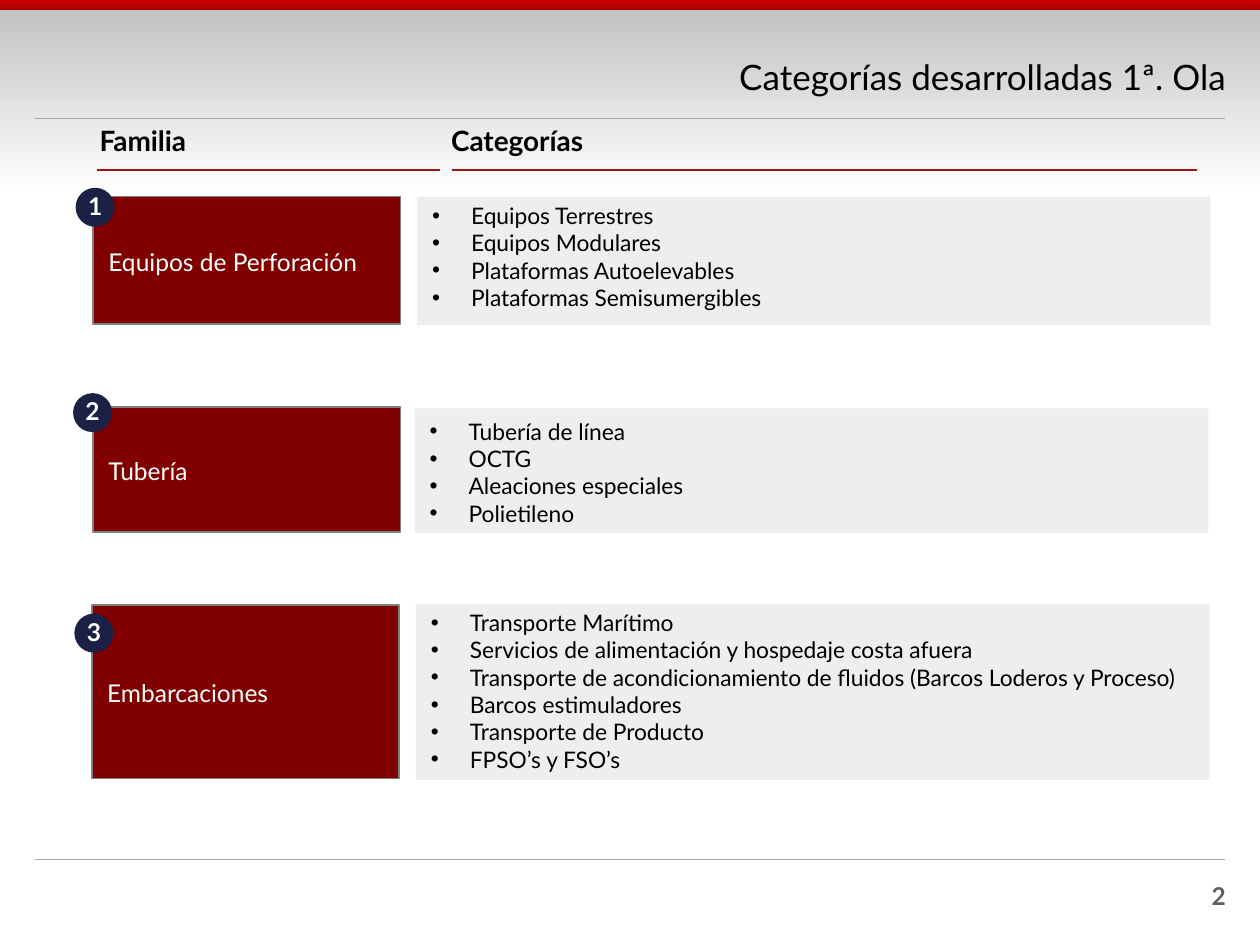
"""Build the slide of first-wave families and their categories."""
from lxml import etree
from pptx import Presentation, util as u
from pptx.dml.color import RGBColor
from pptx.enum import shapes, text
from pptx.oxml.ns import qn

BLACK = RGBColor(0x00, 0x00, 0x00)
WHITE = RGBColor(0xFF, 0xFF, 0xFF)
SILVER = RGBColor(0xC0, 0xC0, 0xC0)
RED = RGBColor(0xCC, 0x00, 0x00)
DARK_RED = RGBColor(0xA8, 0x00, 0x00)
MAROON = RGBColor(0x80, 0x00, 0x00)
RULE_RED = RGBColor(0x9B, 0x17, 0x17)
GRAY = RGBColor(0x80, 0x80, 0x80)
RULE_GRAY = RGBColor(0xA6, 0xA6, 0xA6)
PAGE_GRAY = RGBColor(0x5F, 0x5F, 0x5F)
PANEL = RGBColor(0xEF, 0xEE, 0xEC)
NAVY = RGBColor(0x1B, 0x20, 0x45)

LEFT, CENTER, RIGHT = text.PP_ALIGN.LEFT, text.PP_ALIGN.CENTER, text.PP_ALIGN.RIGHT
TOP, MIDDLE = text.MSO_ANCHOR.TOP, text.MSO_ANCHOR.MIDDLE
RECT, OVAL = shapes.MSO_SHAPE.RECTANGLE, shapes.MSO_SHAPE.OVAL
NO_INSET = (0, 0, 0, 0)
BOX_INSET = (0.12, 0.08, 0.08, 0.06)
LIST_INSET = (0.12, 0.04, 0.08, 0.06)

prs = Presentation()
prs.slide_width, prs.slide_height = u.Inches(10), u.Inches(7.5)
COL, ROW = prs.slide_width / 100, prs.slide_height / 75
s = prs.slides.add_slide(prs.slide_layouts[6])


def add_box(kind, x, y, w, h, fill=None, line=None):
    area = int(x * COL), int(y * ROW), int(w * COL), int(h * ROW)
    if kind is None:
        return s.shapes.add_textbox(*area)
    sp = s.shapes.add_shape(kind, *area)
    sp.shadow.inherit = False
    if fill:
        sp.fill.solid()
        sp.fill.fore_color.rgb = fill
    if line:
        sp.line.color.rgb = line
        sp.line.width = u.Pt(1)
    else:
        sp.line.fill.background()
    return sp


def set_text(sp, words, size, color, bold=False, align=LEFT, anchor=TOP,
             inset=NO_INSET, spacing=None, bullet=False, wrap=True):
    tf = sp.text_frame
    tf.text = words
    tf.word_wrap = wrap
    tf.vertical_anchor = anchor
    tf.margin_left, tf.margin_top, tf.margin_right, tf.margin_bottom = map(u.Inches, inset)
    for p in tf.paragraphs:
        p.alignment = align
        p.line_spacing = spacing
        if bullet:
            pPr = p._p.get_or_add_pPr()
            pPr.set("marL", str(u.Inches(0.31)))
            pPr.set("indent", str(-u.Inches(0.31)))
            etree.SubElement(pPr, qn("a:buFont")).set("typeface", "Arial")
            etree.SubElement(pPr, qn("a:buChar")).set("char", "•")
        for r in p.runs:
            r.font.name = "Lato"
            r.font.size = u.Pt(size)
            r.font.bold = bold
            r.font.color.rgb = color


for height, start, end in [(15.5, SILVER, WHITE), (0.8, RED, DARK_RED)]:
    sp = add_box(RECT, 0, 0, 100, height)
    sp.fill.gradient()
    sp.fill.gradient_angle = 270
    for stop, color, position in zip(sp.fill.gradient_stops, (start, end), (0, 1)):
        stop.color.rgb = color
        stop.position = position

for x1, x2, y, color in [
    (2.8, 97.2, 68.2, RULE_GRAY),
    (2.8, 97.2, 9.4, RULE_GRAY),
    (35.9, 95, 13.5, RULE_RED),
    (7.7, 34.9, 13.5, RULE_RED),
]:
    rule = s.shapes.add_connector(shapes.MSO_CONNECTOR.STRAIGHT, int(x1 * COL),
                                  int(y * ROW), int(x2 * COL), int(y * ROW))
    rule.line.color.rgb = color
    rule.line.width = u.Pt(0.75)
    etree.SubElement(rule._element.spPr, qn("a:effectLst"))

set_text(add_box(None, 74, 69.4, 23.3, 3.2), "2", 14, PAGE_GRAY, bold=True,
         align=RIGHT, inset=(0.1, 0.05, 0, 0.05))
set_text(add_box(None, 20.5, 3.4, 76.8, 5.7), "Categorías desarrolladas 1ª. Ola",
         20, BLACK, align=RIGHT, anchor=MIDDLE, spacing=0.9)
for x, w, heading in [(7.9, 24, "Familia"), (35.8, 52.8, "Categorías")]:
    set_text(add_box(None, x, 10.1, w, 2.4), heading, 16, BLACK, bold=True, spacing=0.9)

families = [
    ("Equipos de Perforación", (7.4, 15.6, 10.1), (33.1, 15.6, 10.2), (6, 14.9),
     TOP, LIST_INSET,
     ["Equipos Terrestres", "Equipos Modulares", "Plataformas Autoelevables",
      "Plataformas Semisumergibles"]),
    ("Tubería", (7.4, 32.3, 9.9), (32.9, 32.4, 9.9), (5.8, 31.2),
     MIDDLE, BOX_INSET,
     ["Tubería de línea", "OCTG", "Aleaciones especiales", "Polietileno"]),
    ("Embarcaciones", (7.3, 48, 13.8), (33, 47.9, 14), (5.9, 48.7),
     TOP, LIST_INSET,
     ["Transporte Marítimo", "Servicios de alimentación y hospedaje costa afuera",
      "Transporte de acondicionamiento de fluidos (Barcos Loderos y Proceso)",
      "Barcos estimuladores", "Transporte de Producto", "FPSO’s y FSO’s"]),
]
for number, (family, box, panel, badge, anchor, inset, categories) in enumerate(families, 1):
    x, y, h = box
    set_text(add_box(RECT, x, y, 24.4, h, MAROON, GRAY), family, 14, WHITE,
             anchor=MIDDLE, inset=BOX_INSET)
    x, y, h = panel
    set_text(add_box(RECT, x, y, 63, h, PANEL), "\n".join(categories), 13, BLACK,
             anchor=anchor, inset=inset, bullet=True)
    x, y = badge
    set_text(add_box(OVAL, x, y, 3.1, 3.1, NAVY), str(number), 14, WHITE, bold=True,
             align=CENTER, anchor=MIDDLE, spacing=0.9, wrap=False)

prs.save("out.pptx")
